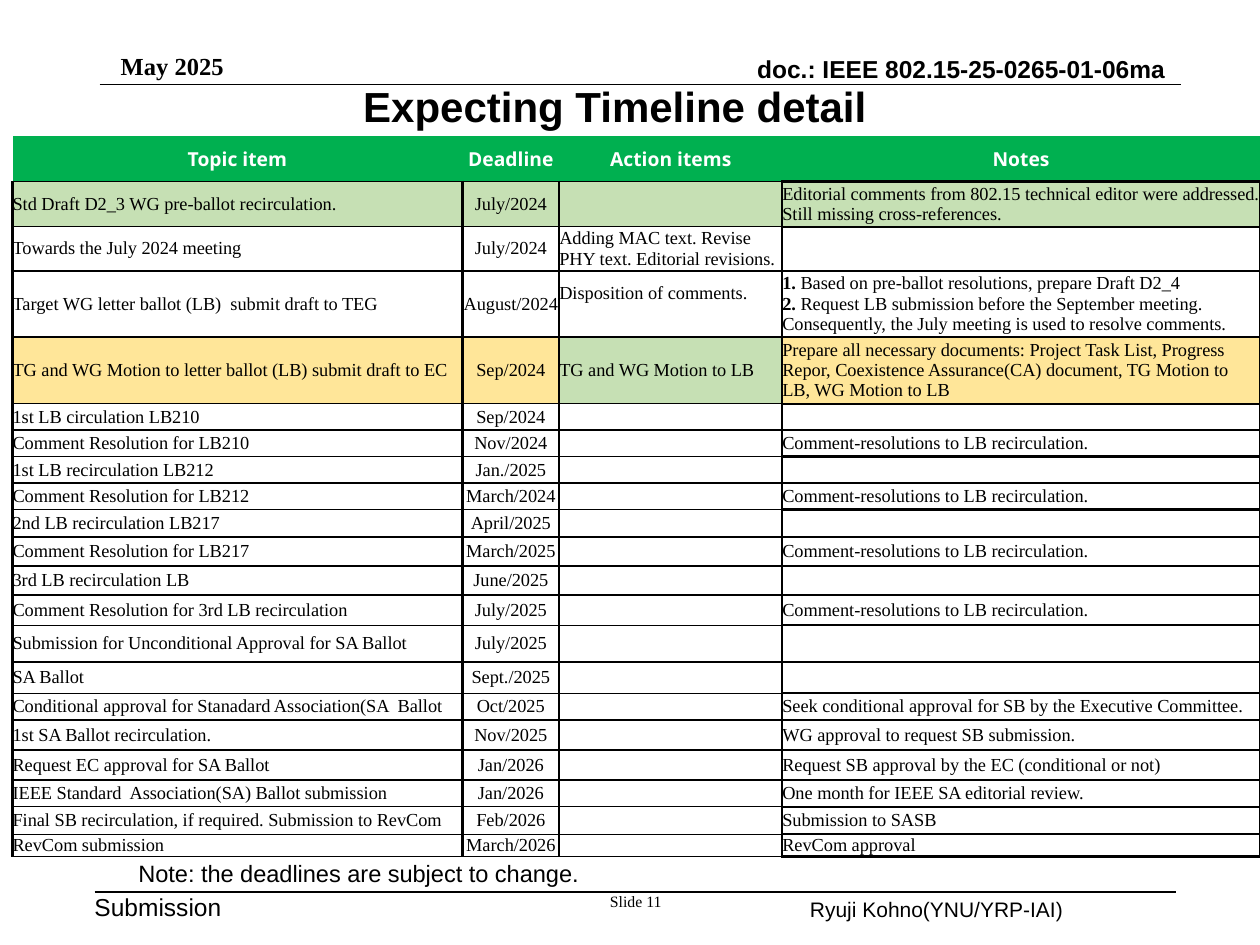
from lxml import etree
from pptx import Presentation, util as u
from pptx.dml.color import RGBColor
from pptx.enum import shapes, text
from pptx.oxml import ns

SANS, SERIF, HEAD = "Arial", "Times New Roman", "Open Sans"
GREEN, PALE, YELLOW = "00B050", "C6E0B4", "FFE699"
LEFT, CENTER, RIGHT = text.PP_ALIGN.LEFT, text.PP_ALIGN.CENTER, text.PP_ALIGN.RIGHT
TOP, MIDDLE, BOTTOM = text.MSO_ANCHOR.TOP, text.MSO_ANCHOR.MIDDLE, text.MSO_ANCHOR.BOTTOM
NO_STYLE = "{2D5ABB26-0587-4C30-8999-92F81FD0307C}"

TITLE = " Expecting Timeline detail"
LABELS = [
    ("doc.: IEEE 802.15-25-0265-01-06ma", (4.92, 0.42, 4.33, 0.24), (0, 0), SANS, 14, True, RIGHT, BOTTOM),
    ("Submission", (0.75, 7.08, 1.16, 0.24), (0, 0), SANS, 14, False, LEFT, TOP),
    ("Ryuji Kohno(YNU/YRP-IAI)", (6.33, 7.07, 2.79, 0.3), (0.1, 0.05), SANS, 12, False, LEFT, TOP),
    ("May 2025", (0.86, 0.5, 1.75, 0.24), (0.1, 0.1), SERIF, 14, True, LEFT, BOTTOM),
    ("Slide 11", (4.75, 7.08, 0.59, 0.2), (0, 0), SERIF, 9, False, CENTER, TOP),
    ("Note: the deadlines are subject to change.", (1, 6.77, 3.75, 0.33), (0.1, 0.05), SANS, 13.5, False, LEFT, TOP),
]
RULES = [(0.79, 9.37, 0.67), (0.75, 9.33, 7.08)]

COLS = [3.57, 0.77, 1.77, 3.79]
RESOLVED = "Comment-resolutions to LB recirculation."
ROWS = [
    (0.36, "Topic item", "Deadline", "Action items", "Notes"),
    (0.36, "Std Draft D2_3 WG pre-ballot recirculation.", "July/2024", "",
     "Editorial comments from 802.15 technical editor were addressed. Still missing cross-references."),
    (0.35, "Towards the July 2024 meeting", "July/2024",
     "Adding MAC text. Revise PHY text. Editorial revisions.", ""),
    (0.52, "Target WG letter ballot (LB)  submit draft to TEG", "August/2024", "Disposition of comments.\n",
     "*1.* Based on pre-ballot resolutions, prepare Draft D2_4\n*2.* Request LB submission before the "
     "September meeting. Consequently, the July meeting is used to resolve comments."),
    (0.53, "TG and WG Motion to letter ballot (LB) submit draft to EC", "Sep/2024", "TG and WG Motion to LB",
     "Prepare all necessary documents: Project Task List, Progress Repor, Coexistence Assurance(CA) "
     "document, TG Motion to LB, WG Motion to LB"),
    (0.21, "1st LB circulation LB210", "Sep/2024", "", ""),
    (0.21, "Comment Resolution for LB210", "Nov/2024", "", RESOLVED),
    (0.21, "1st LB recirculation LB212", "Jan./2025", "", ""),
    (0.21, "Comment Resolution for LB212", "March/2024", "", RESOLVED),
    (0.22, "2nd LB recirculation LB217", "April/2025", "", ""),
    (0.23, "Comment Resolution for LB217", "March/2025", "", RESOLVED),
    (0.23, "3rd LB recirculation LB", "June/2025", "", ""),
    (0.24, "Comment Resolution for 3rd LB recirculation", "July/2025", "", RESOLVED),
    (0.29, "Submission for Unconditional Approval for SA Ballot", "July/2025", "", ""),
    (0.25, "SA Ballot", "Sept./2025", "", ""),
    (0.21, "Conditional approval for Stanadard Association(SA  Ballot", "Oct/2025", "",
     "Seek conditional approval for SB by the Executive Committee."),
    (0.24, "1st SA Ballot recirculation.", "Nov/2025", "", "WG approval to request SB submission."),
    (0.24, "Request EC approval for SA Ballot", "Jan/2026", "", "Request SB approval by the EC (conditional or not)"),
    (0.21, "IEEE Standard  Association(SA) Ballot submission", "Jan/2026", "", "One month for IEEE SA editorial review."),
    (0.22, "Final SB recirculation, if required. Submission to RevCom", "Feb/2026", "", "Submission to SASB"),
    (0.17, "RevCom submission", "March/2026", "", "RevCom approval"),
]
FILLS = {0: [GREEN] * 4, 1: [PALE] * 4, 4: [YELLOW, YELLOW, PALE, YELLOW]}


def rgb(value):
    """Turn a hex string into a colour."""
    return RGBColor.from_string(value)


def style(p, name, size, bold=False, color="000000", align=LEFT):
    """Format one paragraph."""
    p.alignment = align
    p.font.name, p.font.size, p.font.bold = name, u.Pt(size), bold
    p.font.color.rgb = rgb(color)


def frame(tf, inset, anchor, wrap=True):
    """Set the margins, anchor and wrapping of a text frame."""
    tf.margin_left = tf.margin_right = u.Inches(inset[0])
    tf.margin_top = tf.margin_bottom = u.Inches(inset[1])
    tf.vertical_anchor, tf.word_wrap = anchor, wrap


def add_title(s):
    """Place and format the title."""
    sp = s.shapes.title
    sp.left, sp.top, sp.width, sp.height = map(u.Inches, (2.69, 0.59, 4.32, 0.5))
    tf = sp.text_frame
    tf.text = TITLE
    tf.auto_size = text.MSO_AUTO_SIZE.NONE
    frame(tf, (0.1, 0.05), TOP, False)
    style(tf.paragraphs[0], SANS, 24, True)


def add_label(s, words, box, inset, name, size, bold, align, anchor):
    """Add one line of text."""
    tf = s.shapes.add_textbox(*map(u.Inches, box)).text_frame
    tf.text = words
    frame(tf, inset, anchor)
    style(tf.paragraphs[0], name, size, bold, align=align)


def add_rule(s, x1, x2, y):
    """Add a horizontal rule."""
    line = s.shapes.add_connector(shapes.MSO_CONNECTOR.STRAIGHT, *map(u.Inches, (x1, y, x2, y)))
    line.line.color.rgb, line.line.width = rgb("000000"), u.Pt(1)
    etree.SubElement(line._element.spPr, ns.qn("a:effectLst"))


def add_borders(cell, side, level):
    """Draw the four borders of a cell, with widths in points."""
    tc_pr = cell._tc.get_or_add_tcPr()
    for edge, width in zip("LRTB", (side, side, level, level)):
        ln = etree.SubElement(tc_pr, ns.qn("a:ln" + edge), w=str(u.Pt(width)))
        fill = etree.SubElement(ln, ns.qn("a:solidFill"))
        etree.SubElement(fill, ns.qn("a:srgbClr"), val="000000")


def fill_cell(cell, words, row, col):
    """Write and format one table cell, with bold between asterisks."""
    header = row == 0
    size = 11 if header else 10.5
    cell.margin_left = cell.margin_right = cell.margin_top = cell.margin_bottom = 0
    cell.vertical_anchor = MIDDLE
    p = cell.text_frame.paragraphs[0]
    style(p, HEAD if header else SERIF, size, header, "FFFFFF" if header else "000000",
          CENTER if header or col == 1 else LEFT)
    for i, line in enumerate(words.split("\n")):
        if i:
            p.add_line_break()
        for j, part in enumerate(line.split("*")):
            if part:
                r = p.add_run()
                r.text = part
                if j % 2:
                    r.font.bold = True
    etree.SubElement(p._p, ns.qn("a:endParaRPr"), sz=str(int(size * 100)))
    if not header:
        add_borders(cell, 1.5, 1.5 if col == 3 else 1)
    if row in FILLS:
        cell.fill.solid()
        cell.fill.fore_color.rgb = rgb(FILLS[row][col])
    else:
        cell.fill.background()


def add_timeline(s):
    """Add the timeline table."""
    height = sum(row[0] for row in ROWS)
    box = map(u.Inches, (0.1, 1.08, sum(COLS), height))
    table = s.shapes.add_table(len(ROWS), len(COLS), *box).table
    table._tbl.tblPr.find(ns.qn("a:tableStyleId")).text = NO_STYLE
    table.horz_banding = False
    for column, width in zip(table.columns, COLS):
        column.width = u.Inches(width)
    for i, (row_height, *cells) in enumerate(ROWS):
        table.rows[i].height = u.Inches(row_height)
        for j, words in enumerate(cells):
            fill_cell(table.cell(i, j), words, i, j)


def main():
    """Build the slide."""
    prs = Presentation()
    prs.slide_width, prs.slide_height = u.Inches(10), u.Inches(7.5)
    s = prs.slides.add_slide(prs.slide_layouts[5])
    add_title(s)
    for label in LABELS:
        add_label(s, *label)
    for rule in RULES:
        add_rule(s, *rule)
    add_timeline(s)
    prs.save("out.pptx")


if __name__ == "__main__":
    main()
